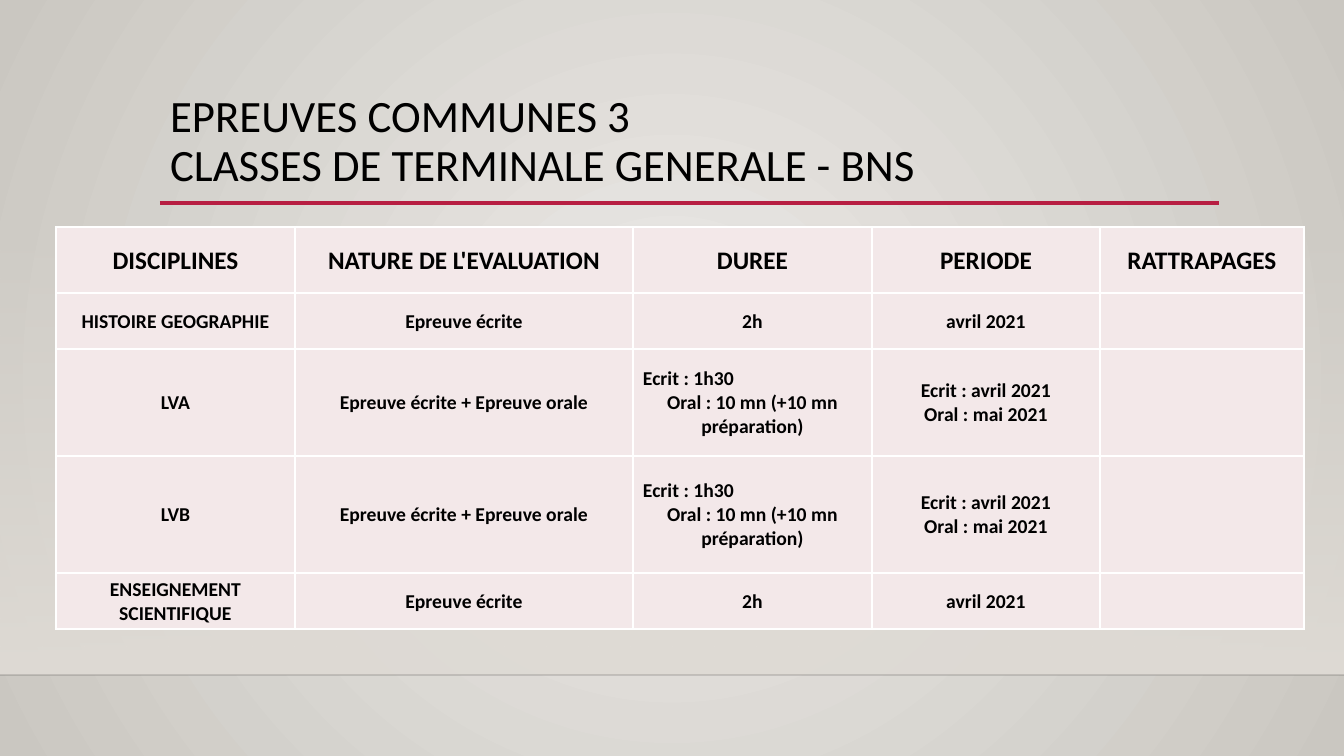
from dataclasses import dataclass

from lxml.etree import SubElement
from pptx import Presentation
from pptx.dml.color import RGBColor
from pptx.dml.fill import FillFormat
from pptx.enum.shapes import MSO_CONNECTOR, MSO_SHAPE
from pptx.enum.text import MSO_ANCHOR, MSO_AUTO_SIZE, PP_ALIGN
from pptx.oxml import parse_xml
from pptx.oxml.ns import nsdecls, qn
from pptx.slide import Slide
from pptx.table import _Cell
from pptx.text.text import _Paragraph
from pptx.util import Emu, Pt

COLORS = {
    "center": "ECEAE7",
    "edge": "CAC7C1",
    "band": "DFDBD5",
    "floor": "000001",
    "accent": "B71E42",
    "text": "000000",
    "cell": "F3E8E9",
    "border": "FFFFFF",
}
FONT = "Calibri"
TITLE_LINES = ["EPREUVES COMMUNES 3", "CLASSES DE TERMINALE GENERALE - BNS"]
COLUMN_WIDTHS = [239, 338, 239, 228, 204]


@dataclass
class Line:
    left: int
    right: int
    y: int
    color: str
    width: float
    opacity: int = 100


@dataclass
class Exam:
    height: int
    texts: list[str]
    size: int = 14


RULES = [
    Line(0, 1344, 675, "floor", 1, 20),
    Line(160, 1219, 203, "accent", 2.5),
]
WRITTEN = "Epreuve écrite"
WRITTEN_ORAL = "Epreuve écrite + Epreuve orale"
DURATIONS = "Ecrit : 1h30\nOral : 10 mn (+10 mn préparation)"
PERIODS = "Ecrit : avril 2021\nOral : mai 2021"
EXAMS = [
    Exam(66, ["DISCIPLINES", "NATURE DE L'EVALUATION", "DUREE", "PERIODE", "RATTRAPAGES"], 18),
    Exam(56, ["HISTOIRE GEOGRAPHIE", WRITTEN, "2h", "avril 2021", ""]),
    Exam(107, ["LVA", WRITTEN_ORAL, DURATIONS, PERIODS, ""]),
    Exam(117, ["LVB", WRITTEN_ORAL, DURATIONS, PERIODS, ""]),
    Exam(56, ["ENSEIGNEMENT SCIENTIFIQUE", WRITTEN, "2h", "avril 2021", ""]),
]


def px(length: int) -> Emu:
    return Emu(round(length * 12192000 / 1344))


def rgb(name: str) -> RGBColor:
    return RGBColor.from_string(COLORS[name])


def set_opacity(color_element, percent: int) -> None:
    SubElement(color_element, qn("a:alpha")).set("val", str(percent * 1000))


def set_gradient(fill: FillFormat, start: str, end: str) -> None:
    fill.gradient()
    fill.gradient_angle = 270
    for stop, position, name in zip(fill.gradient_stops, (0, 1), (start, end)):
        stop.position = position
        stop.color.rgb = rgb(name)


def add_run(paragraph: _Paragraph, text: str, size: int, bold: bool) -> None:
    run = paragraph.add_run()
    run.text = text
    run.font.name = FONT
    run.font.size = Pt(size)
    run.font.bold = bold
    run.font.color.rgb = rgb("text")


def paint_background(slide: Slide) -> None:
    set_gradient(slide.background.fill, "center", "edge")
    gradient = slide.element.find(".//" + qn("a:gradFill"))
    gradient.replace(
        gradient.find(qn("a:lin")),
        parse_xml(
            f'<a:path {nsdecls("a")} path="circle">'
            '<a:fillToRect l="50000" t="50000" r="50000" b="50000"/></a:path>'
        ),
    )


def add_band(slide: Slide) -> None:
    band = slide.shapes.add_shape(MSO_SHAPE.RECTANGLE, px(0), px(223), px(1344), px(452))
    band.shadow.inherit = False
    band.line.fill.background()
    set_gradient(band.fill, "band", "band")
    set_opacity(band.element.find(".//" + qn("a:srgbClr")), 0)


def add_rule(slide: Slide, rule: Line) -> None:
    connector = slide.shapes.add_connector(
        MSO_CONNECTOR.STRAIGHT, px(rule.left), px(rule.y), px(rule.right), px(rule.y)
    )
    connector.line.color.rgb = rgb(rule.color)
    connector.line.width = Pt(rule.width)
    if rule.opacity < 100:
        set_opacity(connector.element.find(".//" + qn("a:srgbClr")), rule.opacity)
    SubElement(connector.element.find(qn("p:spPr")), qn("a:effectLst"))


def write_title(slide: Slide) -> None:
    title = slide.shapes.title
    title.left, title.top, title.width, title.height = px(160), px(89), px(1058), px(116)
    frame = title.text_frame
    frame.word_wrap = True
    frame.auto_size = MSO_AUTO_SIZE.NONE
    frame.vertical_anchor = MSO_ANCHOR.TOP
    paragraph = frame.paragraphs[0]
    paragraph.alignment = PP_ALIGN.LEFT
    paragraph.line_spacing = 0.9
    for index, text in enumerate(TITLE_LINES):
        if index:
            paragraph.add_line_break()
        add_run(paragraph, text, 32, False)


def style_cell(cell: _Cell) -> None:
    cell.fill.solid()
    cell.fill.fore_color.rgb = rgb("cell")
    cell.vertical_anchor = MSO_ANCHOR.MIDDLE
    cell.margin_left = cell.margin_right = cell.margin_top = px(1)
    cell.margin_bottom = 0
    properties = cell._tc.get_or_add_tcPr()
    for index, side in enumerate("LRTB"):
        border = parse_xml(
            f'<a:ln{side} {nsdecls("a")} w="{Pt(1)}"><a:solidFill>'
            f'<a:srgbClr val="{COLORS["border"]}"/></a:solidFill></a:ln{side}>'
        )
        properties.insert(index, border)


def write_cell(cell: _Cell, text: str, size: int) -> None:
    frame = cell.text_frame
    for index, line in enumerate(text.split("\n")):
        paragraph = frame.add_paragraph() if index else frame.paragraphs[0]
        paragraph.alignment = PP_ALIGN.CENTER
        if text == DURATIONS and index == 0:
            paragraph.alignment = PP_ALIGN.LEFT
            paragraph._p.get_or_add_pPr().set("marL", str(px(9)))
        if line:
            add_run(paragraph, line, size, True)


def add_exam_table(slide: Slide) -> None:
    heights = [exam.height for exam in EXAMS]
    exam_table = slide.shapes.add_table(
        len(EXAMS), len(COLUMN_WIDTHS), px(56), px(227), px(sum(COLUMN_WIDTHS)), px(sum(heights))
    ).table
    exam_table.first_row = False
    exam_table.horz_banding = False
    for column, width in zip(exam_table.columns, COLUMN_WIDTHS):
        column.width = px(width)
    for row, exam in zip(exam_table.rows, EXAMS):
        row.height = px(exam.height)
        for cell, text in zip(row.cells, exam.texts):
            style_cell(cell)
            write_cell(cell, text, exam.size)


def main() -> None:
    presentation = Presentation()
    presentation.slide_width = px(1344)
    presentation.slide_height = px(756)
    slide = presentation.slides.add_slide(presentation.slide_layouts.get_by_name("Title Only"))
    paint_background(slide)
    add_band(slide)
    for rule in RULES:
        add_rule(slide, rule)
    write_title(slide)
    add_exam_table(slide)
    presentation.save("out.pptx")


if __name__ == "__main__":
    main()
